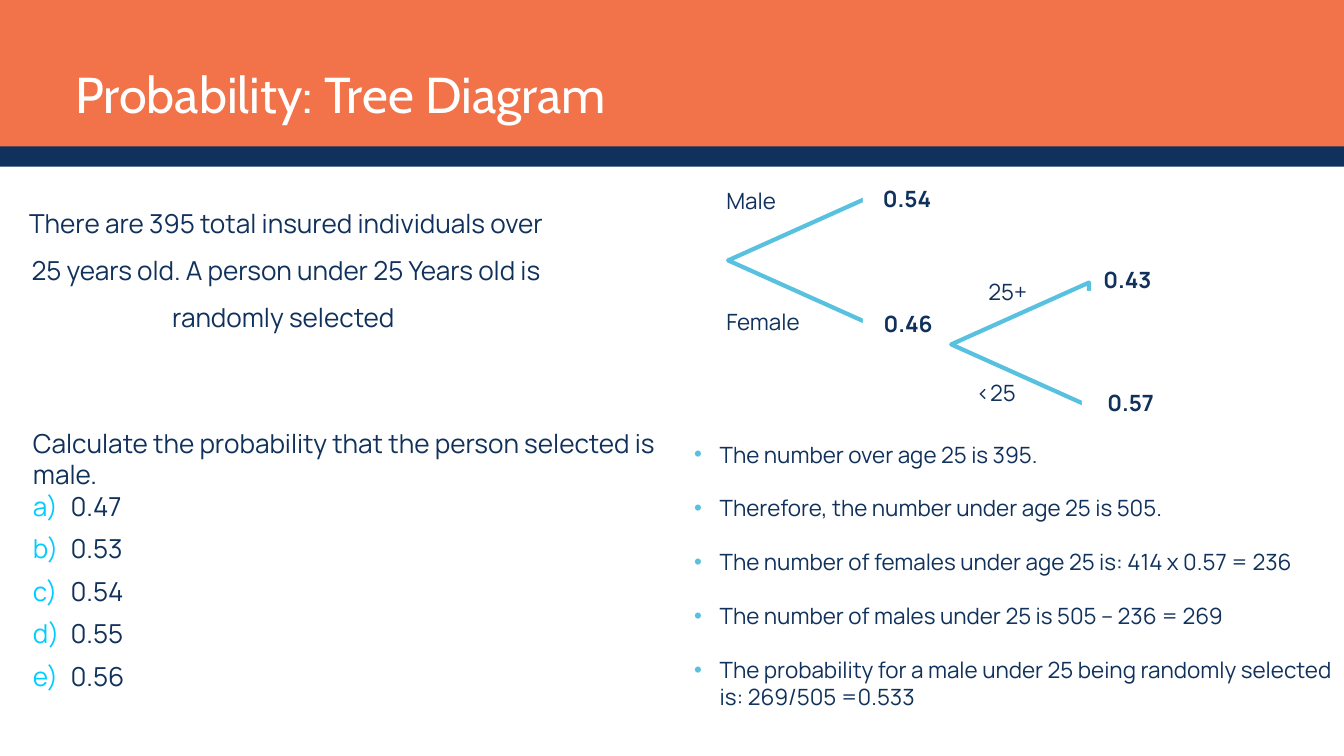
"""Build the tree diagram slide of a probability lesson."""
from dataclasses import dataclass
from typing import Any, Optional

import pptx
import pptx.dml.color
import pptx.enum.shapes
import pptx.enum.text
import pptx.oxml
import pptx.oxml.ns
import pptx.util
from pptx.util import Inches

ALIGN = pptx.enum.text.PP_ALIGN
SHAPE = pptx.enum.shapes.MSO_SHAPE


@dataclass(frozen=True)
class Theme:
    """Colours, fonts and type sizes of the slide."""
    orange: str = "F27349"
    navy: str = "10315C"
    sky: str = "57C1DF"
    cyan: str = "00CDFF"
    white: str = "FFFFFF"
    heading_font: str = "Cabin"
    text_font: str = "Manrope"
    bullet_font: str = "Arial"
    title: float = 54
    body: float = 28
    detail: float = 24
    branch: float = 4.5


@dataclass(frozen=True)
class Box:
    """A position and size in inches."""
    left: float
    top: float
    width: float
    height: float


@dataclass(frozen=True)
class Band:
    """A filled strip of the header."""
    box: Box
    color: str


@dataclass(frozen=True)
class Fork:
    """A triangle turned to the left whose base is covered, leaving two branches."""
    triangle: Box
    cover: Box


@dataclass(frozen=True)
class Label:
    """A short text beside a branch of the tree."""
    text: str
    left: float
    top: float
    bold: bool = False


@dataclass(frozen=True)
class Bullet:
    """A list marker with its font, colour and hanging indent."""
    marker: str
    font: str
    color: str
    indent: float


THEME = Theme()
LABEL_SIZE = (1.67, 0.5)
TRIANGLE_SIZE = (1.84, 2.05)
COVER_SIZE = (0.36, 2.23)
BANDS = (
    Band(Box(0, 0, 20, 2.43), THEME.orange),
    Band(Box(0, 2.18, 20.27, 0.3), THEME.navy),
)
FORKS = (
    Fork(Box(10.94, 2.85, *TRIANGLE_SIZE), Box(12.84, 2.73, *COVER_SIZE)),
    Fork(Box(14.26, 4.1, *TRIANGLE_SIZE), Box(16.1, 4.33, *COVER_SIZE)),
)
LABELS = (
    Label("0.54", 13.04, 2.71, True),
    Label("0.46", 13.05, 4.57, True),
    Label("Male", 10.71, 2.73),
    Label("Female", 10.71, 4.54),
    Label("25+", 14.61, 4.09),
    Label("<25", 14.43, 5.59),
    Label("0.43", 16.32, 3.91, True),
    Label("0.57", 16.38, 5.74, True),
)
SCENARIO = ("There are 395 total insured individuals over 25 years old. "
            "A person under 25 Years old is randomly selected ")
QUESTION = "Calculate the probability that the person selected is male."
ANSWERS = ("0.47", "0.53", "0.54", "0.55", "0.56")
STEPS = (
    "The number over age 25 is 395.",
    "Therefore, the number under age 25 is 505.",
    "The number of females under age 25 is: 414 x 0.57 = 236",
    "The number of males under 25 is 505 – 236 = 269",
    "The probability for a male under 25 being randomly selected is: 269/505 =0.533",
)
LETTERS = Bullet('<a:buAutoNum {} type="alphaLcParenR"/>', THEME.text_font, THEME.cyan, 0.56)
DOTS = Bullet('<a:buChar {} char="•"/>', THEME.bullet_font, THEME.sky, 0.38)


def rgb(color: str) -> pptx.dml.color.RGBColor:
    """Turn a hex string into a colour."""
    return pptx.dml.color.RGBColor.from_string(color)


def place(shape: Any, box: Box) -> None:
    """Move and size a shape."""
    shape.left, shape.top = Inches(box.left), Inches(box.top)
    shape.width, shape.height = Inches(box.width), Inches(box.height)


def prepare(shape: Any, inset: bool = False) -> Any:
    """Set the wrapping, anchor and insets of a text shape and return its frame."""
    frame = shape.text_frame
    frame.word_wrap = True
    frame.auto_size = pptx.enum.text.MSO_AUTO_SIZE.NONE
    frame.vertical_anchor = pptx.enum.text.MSO_ANCHOR.TOP
    if not inset:
        frame.margin_left = frame.margin_right = 0
        frame.margin_top = frame.margin_bottom = 0
    return frame


def set_bullet(paragraph: Any, bullet: Optional[Bullet]) -> None:
    """Give a paragraph its list marker, or none."""
    namespace = pptx.oxml.ns.nsdecls("a")
    properties = paragraph._p.get_or_add_pPr()
    indent = Inches(bullet.indent) if bullet else 0
    properties.set("marL", str(indent))
    properties.set("indent", str(-indent))
    parts = ["<a:buNone {}/>"]
    if bullet:
        parts = [f'<a:buClr {{}}><a:srgbClr val="{bullet.color}"/></a:buClr>',
                 f'<a:buFont {{}} typeface="{bullet.font}"/>', bullet.marker]
    for part in parts:
        properties.append(pptx.oxml.parse_xml(part.format(namespace)))


def write(frame: Any, text: str, *, size: float, color: str = THEME.navy,
          font: str = THEME.text_font, bold: bool = False, align: Any = ALIGN.LEFT,
          spacing: Any = 1.0, after: float = 0, bullet: Optional[Bullet] = None) -> None:
    """Add one formatted paragraph to a text frame."""
    first = frame.paragraphs[0]
    paragraph = frame.add_paragraph() if first.runs else first
    set_bullet(paragraph, bullet)
    paragraph.alignment = align
    paragraph.line_spacing = spacing
    paragraph.space_before = pptx.util.Pt(0)
    paragraph.space_after = pptx.util.Pt(after)
    run = paragraph.add_run()
    run.text = text
    run.font.name, run.font.size = font, pptx.util.Pt(size)
    run.font.bold = bold
    run.font.color.rgb = rgb(color)


def add_shape(slide: Any, kind: Any, box: Box, fill: Optional[str] = None) -> Any:
    """Add a preset shape without outline, filled if a colour is given."""
    shape = slide.shapes.add_shape(kind, 0, 0, 0, 0)
    place(shape, box)
    shape.shadow.inherit = False
    shape.line.fill.background()
    if fill:
        shape.fill.solid()
        shape.fill.fore_color.rgb = rgb(fill)
    else:
        shape.fill.background()
    return shape


def draw_band(slide: Any, band: Band) -> None:
    """Draw a header strip behind the title."""
    strip = add_shape(slide, SHAPE.RECTANGLE, band.box, band.color)
    slide.shapes.title.element.addprevious(strip.element)


def draw_fork(slide: Any, fork: Fork) -> None:
    """Draw the two branches of a fork."""
    branches = add_shape(slide, SHAPE.FLOWCHART_EXTRACT, fork.triangle)
    branches.rotation = 270
    branches.line.color.rgb = rgb(THEME.sky)
    branches.line.width = pptx.util.Pt(THEME.branch)
    add_shape(slide, SHAPE.RECTANGLE, fork.cover, THEME.white)


def add_text(slide: Any, box: Box, inset: bool = False) -> Any:
    """Add a text box and return its frame."""
    shape = slide.shapes.add_textbox(0, 0, 0, 0)
    place(shape, box)
    return prepare(shape, inset)


def main() -> None:
    """Build and save the slide."""
    deck = pptx.Presentation()
    deck.slide_width, deck.slide_height = Inches(20), Inches(11.25)
    slide = deck.slides.add_slide(deck.slide_layouts.get_by_name("Two Content"))
    title, question, solution = slide.placeholders
    for band in BANDS:
        draw_band(slide, band)

    place(title, Box(1.12, 0.53, 17.75, 1.14))
    write(prepare(title), "Probability: Tree Diagram", size=THEME.title, color=THEME.white,
          font=THEME.heading_font, spacing=pptx.util.Pt(93.8))

    scenario = add_text(slide, Box(0.42, 2.85, 7.67, 2.05))
    write(scenario, SCENARIO, size=THEME.body, align=ALIGN.CENTER, spacing=1.5)

    for fork in FORKS:
        draw_fork(slide, fork)
    for label in LABELS:
        frame = add_text(slide, Box(label.left, label.top, *LABEL_SIZE), inset=True)
        write(frame, label.text, size=THEME.detail, bold=label.bold)

    place(question, Box(0.49, 6.36, 9.6, 3.97))
    choices = prepare(question)
    write(choices, QUESTION, size=THEME.body)
    for answer in ANSWERS:
        write(choices, answer, size=THEME.body, after=12, bullet=LETTERS)

    place(solution, Box(10.33, 6.56, 9.52, 4.69))
    steps = prepare(solution)
    for step in STEPS:
        write(steps, step, size=THEME.detail, after=28.8, bullet=DOTS)

    deck.save("out.pptx")


if __name__ == "__main__":
    main()
